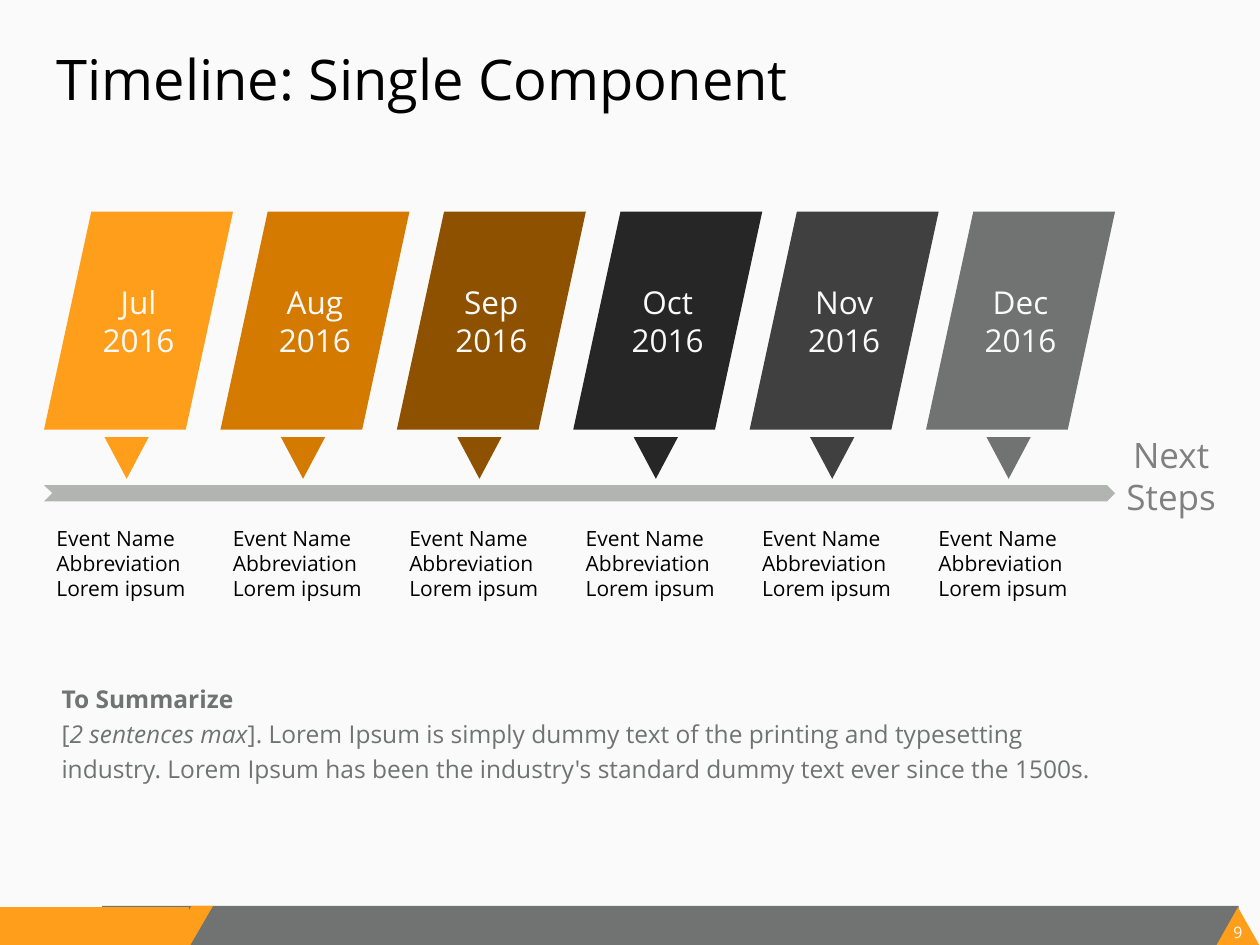
from pptx import Presentation
from pptx.dml.color import RGBColor
from pptx.enum.shapes import MSO_SHAPE
from pptx.enum.text import MSO_ANCHOR, PP_ALIGN
from pptx.util import Inches, Pt

RECTANGLE = MSO_SHAPE.RECTANGLE
TRIANGLE = MSO_SHAPE.ISOSCELES_TRIANGLE
PARALLELOGRAM = MSO_SHAPE.PARALLELOGRAM
CHEVRON = MSO_SHAPE.CHEVRON
LEFT, CENTER = PP_ALIGN.LEFT, PP_ALIGN.CENTER
MIDDLE = MSO_ANCHOR.MIDDLE

FONT = "Open Sans"
ORANGE, GRAY, PAPER, BLACK = "FF9E1B", "707372", "FAFAFA", "000000"
MONTHS = [
    ("Jul", ORANGE), ("Aug", "D47A00"), ("Sep", "8D5100"),
    ("Oct", "262626"), ("Nov", "404040"), ("Dec", GRAY),
]
EVENT = "Event Name Abbreviation Lorem ipsum"


def rgb(color):
    return RGBColor.from_string(color)


def add_filled(slide, preset, left, top, width, height, color, rotation=0):
    shape = slide.shapes.add_shape(preset, left, top, width, height)
    shape.shadow.inherit = False
    shape.fill.solid()
    shape.fill.fore_color.rgb = rgb(color)
    shape.line.fill.background()
    shape.rotation = rotation
    return shape


def write(frame, text, size, color, align=LEFT):
    """Fill a text frame, one paragraph for each line of text."""
    frame.text = text
    for paragraph in frame.paragraphs:
        paragraph.alignment = align
        paragraph.font.name = FONT
        paragraph.font.size = Pt(size)
        paragraph.font.color.rgb = rgb(color)


def add_text(slide, left, top, width, height, text, size, color, align=LEFT):
    frame = slide.shapes.add_textbox(left, top, width, height).text_frame
    frame.word_wrap = True
    write(frame, text, size, color, align)
    return frame


def add_footer(slide, left, top, width, height):
    add_filled(slide, RECTANGLE, left + Inches(0.81), top,
               width - Inches(0.98), height, GRAY)
    add_filled(slide, RECTANGLE, left, top + Inches(0.01),
               Inches(1.5), height, ORANGE)
    slant = add_filled(slide, PARALLELOGRAM, left + Inches(1.34), top,
                       Inches(0.35), height, ORANGE, 180)
    slant.adjustments[0] = 0.58
    add_filled(slide, TRIANGLE, left + width - Inches(0.35),
               top + Inches(0.01), Inches(0.35), height, ORANGE)
    number = add_text(slide, left + width - Inches(0.26), top + Inches(0.13),
                      Inches(0.17), Inches(0.15), "9", 9, PAPER, CENTER)
    number.word_wrap = False
    number.margin_left = number.margin_right = 0
    number.margin_top = number.margin_bottom = 0


def add_month(slide, left, top, width, month, color):
    """Place a month's panel, its pointer and its event."""
    panel = add_filled(slide, PARALLELOGRAM, left, top,
                       width, Inches(1.73), color)
    panel.text_frame.vertical_anchor = MIDDLE
    write(panel.text_frame, f"{month}\n2016", 18, PAPER, CENTER)
    add_filled(slide, TRIANGLE, left + Inches(0.48), top + Inches(1.79),
               Inches(0.35), Inches(0.33), color, 180)
    add_text(slide, left, top + Inches(2.44), Inches(1.3), Inches(1.2),
             EVENT, 12, BLACK)


def add_timeline(slide, left, top, width):
    panel_width = Inches(1.5)
    pitch = (width - panel_width) // (len(MONTHS) - 1)
    add_filled(slide, CHEVRON, left, top + Inches(2.17),
               width, Inches(0.13), "B2B4B2")
    for index, (month, color) in enumerate(MONTHS):
        add_month(slide, left + index * pitch, top, panel_width, month, color)
    add_text(slide, left + width - Inches(0.2), top + Inches(1.71),
             Inches(1.29), Inches(0.77), "Next\nSteps", 20, "808080", CENTER)


def add_summary(slide, left, top, width, height):
    frame = add_text(slide, left, top, width, height,
                     "To Summarize\n[", 14, GRAY)
    heading, body = frame.paragraphs
    heading.font.bold = True
    hint = body.add_run()
    hint.text = "2 sentences max"
    hint.font.italic = True
    body.add_run().text = (
        "]. Lorem Ipsum is simply dummy text of the printing and typesetting "
        "industry. Lorem Ipsum has been the industry's standard dummy text "
        "ever since the 1500s."
    )
    for paragraph in frame.paragraphs:
        paragraph.line_spacing = Pt(19.8)


def main():
    deck = Presentation()
    deck.slide_width, deck.slide_height = Inches(10), Inches(7.5)
    slide = deck.slides.add_slide(deck.slide_layouts[6])
    slide.background.fill.solid()
    slide.background.fill.fore_color.rgb = rgb(PAPER)

    add_footer(slide, 0, Inches(7.19), deck.slide_width, Inches(0.31))
    add_text(slide, Inches(0.35), Inches(0.3), Inches(9.24), Inches(1.25),
             "Timeline: Single Component", 32, BLACK)
    add_timeline(slide, Inches(0.35), Inches(1.68), Inches(8.5))
    add_summary(slide, Inches(0.39), Inches(5.34), Inches(8.46), Inches(0.93))
    deck.save("out.pptx")


if __name__ == "__main__":
    main()
